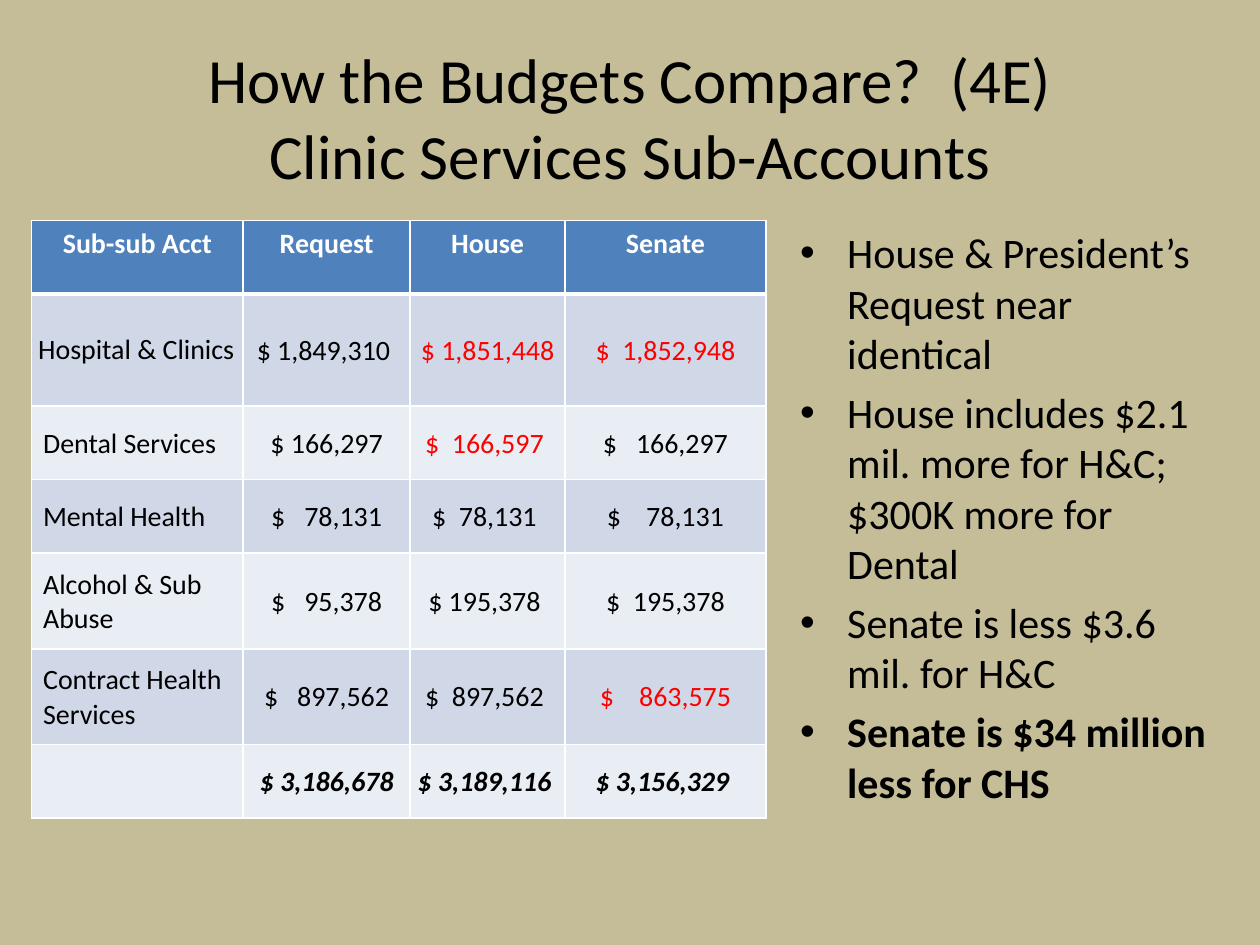
from lxml.etree import SubElement
from pptx import Presentation
from pptx.dml.color import RGBColor
from pptx.enum.text import MSO_ANCHOR, PP_ALIGN
from pptx.oxml.ns import qn
from pptx.util import Cm, Pt

BLACK, WHITE, RED = "000000", "FFFFFF", "FF0000"
SAND, HEADER_BLUE = "C4BD97", "4F81BD"
BANDS = ("D0D8E8", "E9EDF4")

TITLE = "How the Budgets Compare?  (4E)\vClinic Services Sub-Accounts"
BUDGETS = [
    ["Sub-sub Acct", "Request", "House", "Senate"],
    ["Hospital & Clinics", "$ 1,849,310 ", " $ 1,851,448 ", " $  1,852,948 "],
    ["Dental Services", " $ 166,297 ", "$  166,597 ", " $   166,297 "],
    ["Mental Health", " $   78,131 ", "$  78,131 ", " $    78,131 "],
    ["Alcohol & Sub Abuse", " $   95,378 ", "$ 195,378 ", " $  195,378 "],
    ["Contract Health Services", " $   897,562 ", "$  897,562 ", " $    863,575 "],
    ["", " $ 3,186,678 ", "$ 3,189,116 ", "$ 3,156,329 "],
]
HIGHLIGHTS = {(1, 2), (1, 3), (2, 2), (5, 3)}
COLUMN_WIDTHS = (4.26, 3.37, 3.12, 4.05)
ROW_HEIGHTS = (1.48, 2.26, 1.48, 1.48, 1.93, 1.93, 1.48)
FINDINGS = [
    "House & President’s Request near identical",
    "House includes $2.1 mil. more for H&C; $300K more for Dental",
    "Senate is less $3.6 mil. for H&C",
    "Senate is $34 million less for CHS",
]


def rgb(color):
    return RGBColor.from_string(color)


class SlideBuilder:
    """Holds the deck's style and the slide being filled."""

    font = "Calibri"

    def __init__(self, deck, background):
        self.slide = deck.slides.add_slide(deck.slide_layouts[5])
        fill = self.slide.background.fill
        fill.solid()
        fill.fore_color.rgb = rgb(background)

    def format_runs(self, paragraph, size, color=BLACK, bold=False, italic=False):
        for run in paragraph.runs:
            run.font.name = self.font
            run.font.size = Pt(size)
            run.font.color.rgb = rgb(color)
            run.font.bold = bold
            run.font.italic = italic

    def title(self, text, left, top, width, height):
        heading = self.slide.shapes.title
        heading.left, heading.top = Cm(left), Cm(top)
        heading.width, heading.height = Cm(width), Cm(height)
        frame = heading.text_frame
        frame.text = text
        frame.vertical_anchor = MSO_ANCHOR.MIDDLE
        frame.paragraphs[0].alignment = PP_ALIGN.CENTER
        self.format_runs(frame.paragraphs[0], 36)

    def borders(self, cell, top, bottom):
        """Draw white cell borders, with top and bottom widths in points."""
        properties = cell._tc.get_or_add_tcPr()
        for side, width in (("L", 1), ("R", 1), ("T", top), ("B", bottom)):
            line = SubElement(properties, qn(f"a:ln{side}"), w=str(Pt(width)))
            fill = SubElement(line, qn("a:solidFill"))
            SubElement(fill, qn("a:srgbClr"), val=WHITE)

    def cell(self, cell, text, fill, margins, centered, anchor, **run_style):
        cell.text = text
        (cell.margin_left, cell.margin_top,
         cell.margin_right, cell.margin_bottom) = map(Cm, margins)
        cell.vertical_anchor = anchor
        cell.fill.solid()
        cell.fill.fore_color.rgb = rgb(fill)
        paragraph = cell.text_frame.paragraphs[0]
        paragraph.alignment = PP_ALIGN.CENTER if centered else PP_ALIGN.LEFT
        self.format_runs(paragraph, 16, **run_style)

    def budget_table(self, left, top):
        table = self.slide.shapes.add_table(
            len(BUDGETS), len(COLUMN_WIDTHS), Cm(left), Cm(top),
            Cm(sum(COLUMN_WIDTHS)), Cm(sum(ROW_HEIGHTS))).table
        table.horz_banding = False
        for column, width in zip(table.columns, COLUMN_WIDTHS):
            column.width = Cm(width)
        for row, height in zip(table.rows, ROW_HEIGHTS):
            row.height = Cm(height)

        last = len(BUDGETS) - 1
        for r, entries in enumerate(BUDGETS):
            for c, text in enumerate(entries):
                cell = table.cell(r, c)
                self.borders(cell, 3 if r == 1 else 1, 3 if r == 0 else 1)
                if r == 0:
                    self.cell(cell, text, HEADER_BLUE, [0.13] * 4, True,
                              MSO_ANCHOR.TOP, color=WHITE, bold=True)
                    continue
                if c == 0:
                    margins = [0.13] * 4 if r == 1 else (0.23, 0.03, 0.03, 0)
                else:
                    margins = (0.03, 0.03, 0.03, 0)
                self.cell(cell, text, BANDS[(r - 1) % 2], margins, c > 0,
                          MSO_ANCHOR.MIDDLE,
                          color=RED if (r, c) in HIGHLIGHTS else BLACK,
                          bold=r == last, italic=r == last)

    def bullets(self, items, left, top, width, height):
        """Add a bulleted list whose last item is bold."""
        frame = self.slide.shapes.add_textbox(
            Cm(left), Cm(top), Cm(width), Cm(height)).text_frame
        frame.word_wrap = True
        frame.text = "\n".join(items)
        for item, paragraph in zip(items, frame.paragraphs):
            paragraph.space_before = Pt(4.8)
            properties = paragraph._p.get_or_add_pPr()
            properties.set("marL", str(Cm(0.95)))
            properties.set("indent", str(-Cm(0.95)))
            SubElement(properties, qn("a:buFont"), typeface="Arial")
            SubElement(properties, qn("a:buChar"), char="•")
            self.format_runs(paragraph, 24, bold=item == items[-1])


def main():
    deck = Presentation()
    deck.slide_width, deck.slide_height = Cm(25.4), Cm(19.05)
    builder = SlideBuilder(deck, SAND)
    builder.title(TITLE, 1.27, 0.76, 22.86, 3.18)
    builder.budget_table(0.64, 4.45)
    builder.bullets(FINDINGS, 15.88, 4.45, 9.09, 12.57)
    deck.save("out.pptx")


if __name__ == "__main__":
    main()
